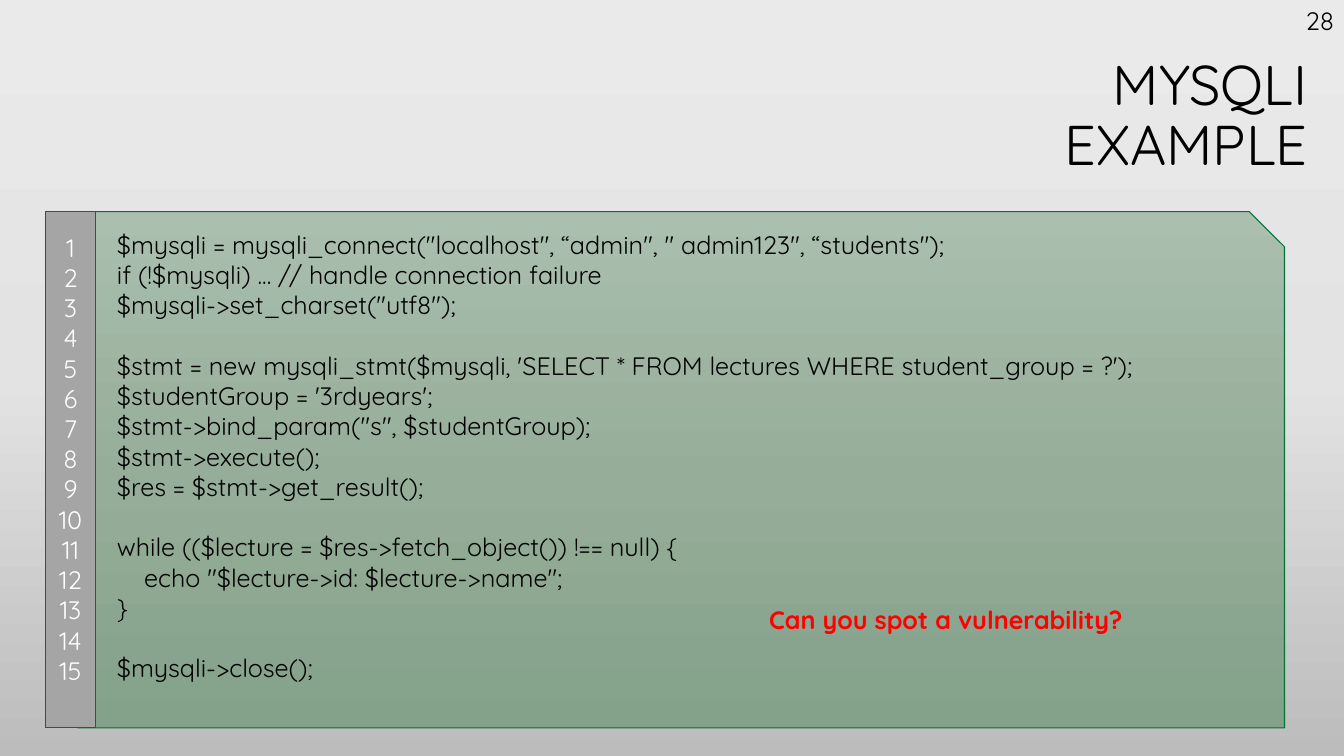
"""Build the MYSQLI example slide with a numbered code panel."""
from copy import deepcopy
from dataclasses import dataclass

from pptx import Presentation
from pptx import util as u
from pptx.dml.color import RGBColor
from pptx.enum import shapes, text
from pptx.oxml.ns import qn

BLACK = RGBColor(0x00, 0x00, 0x00)
WHITE = RGBColor(0xFF, 0xFF, 0xFF)
RED = RGBColor(0xFF, 0x00, 0x00)
GREEN = RGBColor(0x00, 0x74, 0x34)
GREY = RGBColor(0xA5, 0xA5, 0xA5)
DARK_GREY = RGBColor(0x48, 0x48, 0x48)
BACKDROP = [(0, RGBColor(0xEB, 0xEA, 0xEA)), (0.5, RGBColor(0xE4, 0xE3, 0xE3)),
            (1, RGBColor(0xBD, 0xBC, 0xBC))]
PANEL = [(0, RGBColor(0xAB, 0xBF, 0xAE)), (0.52, RGBColor(0x95, 0xAD, 0x99)),
         (1, RGBColor(0x84, 0xA1, 0x89))]
FONT = "Quicksand"
LINE_PITCH = u.Pt(21.6)
CODE_INDENT = u.Inches(0.27)
ALIGN = text.PP_ALIGN

CODE_BLOCKS = [
    ["$mysqli = mysqli_connect(\"localhost\", “admin\", \" admin123\", “students\");",
     "if (!$mysqli) ... // handle connection failure",
     "$mysqli->set_charset(\"utf8\");"],
    ["$stmt = new mysqli_stmt($mysqli, 'SELECT * FROM lectures WHERE student_group = ?');",
     "$studentGroup = '3rdyears';",
     "$stmt->bind_param(\"s\", $studentGroup);",
     "$stmt->execute();",
     "$res = $stmt->get_result();"],
    ["while (($lecture = $res->fetch_object()) !== null) {",
     "\techo \"$lecture->id: $lecture->name\";",
     "}"],
    ["$mysqli->close();"],
]


@dataclass
class Box:
    left: float
    top: float
    width: float
    height: float

    def inches(self) -> list:
        return [u.Inches(v) for v in (self.left, self.top, self.width, self.height)]


@dataclass
class Label:
    box: Box
    wording: str
    align: ALIGN
    color: RGBColor
    bold: bool = False


LABELS = [
    Label(Box(10.45, 0, 2.88, 0.4), "28", ALIGN.RIGHT, BLACK),
    Label(Box(7.53, 5.95, 4.07, 0.4), "Can you spot a vulnerability?", ALIGN.LEFT, RED, True),
]


def format_text(tf, align, color: RGBColor, size: float = 18, bold: bool = False) -> None:
    tf.word_wrap = True
    for p in tf.paragraphs:
        p.alignment = align
        for r in p.runs:
            r.font.name, r.font.size, r.font.bold = FONT, u.Pt(size), bold
            r.font.color.rgb = color


def set_gradient(fill, owner, stops: list) -> None:
    fill.gradient()
    fill.gradient_angle = 270
    gs_list = next(owner.element.iter(qn("a:gsLst")))
    gs_list.append(deepcopy(gs_list[-1]))
    for stop, (position, color) in zip(fill.gradient_stops, stops):
        stop.position = position
        stop.color.rgb = color


def add_panel(s, kind, box: Box, line: RGBColor, weight: float, insets: tuple):
    sp = s.shapes.add_shape(kind, *box.inches())
    sp.shadow.inherit = False
    sp.line.color.rgb = line
    sp.line.width = u.Pt(weight)
    tf = sp.text_frame
    tf.vertical_anchor = text.MSO_ANCHOR.TOP
    tf.margin_left, tf.margin_top, tf.margin_right, tf.margin_bottom = map(u.Inches, insets)
    return sp


def add_label(s, label: Label) -> None:
    tf = s.shapes.add_textbox(*label.box.inches()).text_frame
    tf.text = label.wording
    format_text(tf, label.align, label.color, bold=label.bold)


def add_title(s) -> None:
    sp = s.shapes.title
    sp.left, sp.top, sp.width, sp.height = Box(0.26, 0.46, 12.81, 1.41).inches()
    tf = sp.text_frame
    tf.text = "MYSQLI\vEXAMPLE"
    tf.auto_size = text.MSO_AUTO_SIZE.NONE
    tf.vertical_anchor = text.MSO_ANCHOR.MIDDLE
    format_text(tf, ALIGN.RIGHT, BLACK, 40)
    tf.paragraphs[0].line_spacing = 0.9


def add_code(s) -> None:
    sp = add_panel(s, shapes.MSO_SHAPE.SNIP_1_RECTANGLE, Box(0.77, 2.1, 11.97, 5.12),
                   GREEN, 0.75, (0.39, 0, 0.1, 0.05))
    sp.adjustments[0] = 0.068
    set_gradient(sp.fill, sp, PANEL)
    tf = sp.text_frame
    tf.text = "\n".join(line.strip() for block in CODE_BLOCKS for line in block)
    format_text(tf, ALIGN.LEFT, BLACK)
    paragraphs = iter(tf.paragraphs)
    for b, block in enumerate(CODE_BLOCKS):
        for i, line in enumerate(block):
            p = next(paragraphs)
            if b and i == 0:
                p.space_before = LINE_PITCH
            if line.startswith("\t"):
                p._p.get_or_add_pPr().set("marL", str(CODE_INDENT))


def add_line_numbers(s) -> None:
    sp = add_panel(s, shapes.MSO_SHAPE.RECTANGLE, Box(0.45, 2.1, 0.5, 5.12),
                   DARK_GREY, 1, (0.1, 0.2, 0.1, 0.05))
    sp.fill.solid()
    sp.fill.fore_color.rgb = GREY
    count = sum(map(len, CODE_BLOCKS)) + len(CODE_BLOCKS) - 1
    sp.text_frame.text = "\n".join(str(n) for n in range(1, count + 1))
    format_text(sp.text_frame, ALIGN.CENTER, WHITE)


def main() -> None:
    prs = Presentation()
    prs.slide_width, prs.slide_height = u.Inches(13.33), u.Inches(7.5)
    s = prs.slides.add_slide(prs.slide_layouts[5])
    set_gradient(s.background.fill, s, BACKDROP)
    add_title(s)
    add_code(s)
    for label in LABELS:
        add_label(s, label)
    add_line_numbers(s)
    prs.save("out.pptx")


if __name__ == "__main__":
    main()
